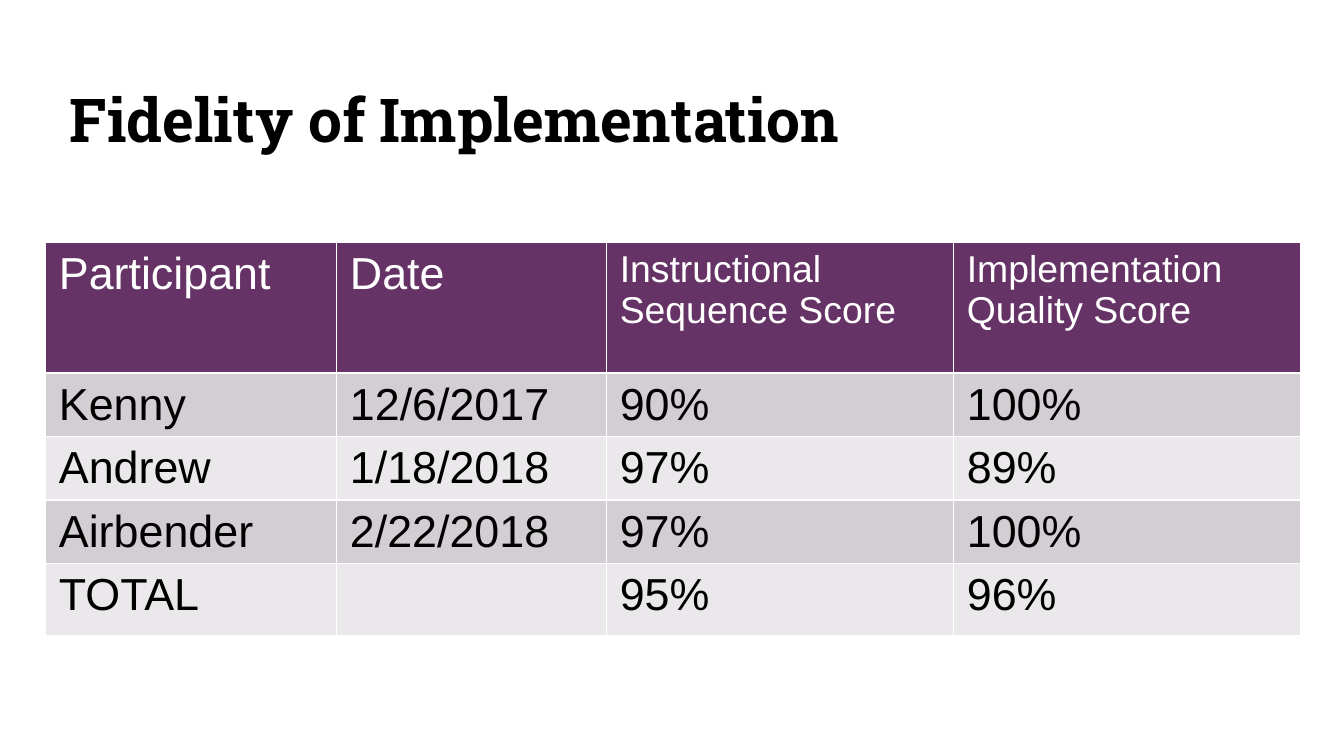
from pptx import Presentation
from pptx import util as u
from pptx.dml.color import RGBColor
from pptx.enum import text


def style(font, name, size, color, bold=False):
    font.name, font.size, font.bold = name, u.Pt(size), bold
    font.color.rgb = RGBColor.from_string(color)


deck = Presentation()
deck.slide_width, deck.slide_height = u.Cm(25.4), u.Cm(14.29)
slide = deck.slides.add_slide(deck.slide_layouts[5])

# Title
title = slide.shapes.title
title.left, title.top = u.Cm(1.07), u.Cm(1.27)
title.width, title.height = u.Cm(23.24), u.Cm(1.9)
frame = title.text_frame
frame.text = "Fidelity of Implementation"
frame.auto_size = text.MSO_AUTO_SIZE.NONE
frame.vertical_anchor = text.MSO_ANCHOR.BOTTOM
frame.margin_left = frame.margin_right = u.Cm(0.25)
frame.margin_top = frame.margin_bottom = u.Cm(0.25)
head = frame.paragraphs[0]
head.alignment = text.PP_ALIGN.LEFT
style(head.font, "Roboto Slab", 32.4, "000000", True)

# Scores; the default table style draws the white grid
rows = [
    ["Participant", "Date", "Instructional Sequence Score", "Implementation Quality Score"],
    ["Kenny", "12/6/2017", "90%", "100%"],
    ["Andrew", "1/18/2018", "97%", "89%"],
    ["Airbender", "2/22/2018", "97%", "100%"],
    ["TOTAL", "", "95%", "96%"],
]
widths = [5.5, 5.1, 6.56, 6.56]
heights = [2.48, 1.2, 1.2, 1.2, 1.37]
table = slide.shapes.add_table(
    len(rows), len(widths), u.Cm(0.86), u.Cm(4.57),
    u.Cm(sum(widths)), u.Cm(sum(heights))).table
for col, width in zip(table.columns, widths):
    col.width = u.Cm(width)
for row, height in zip(table.rows, heights):
    row.height = u.Cm(height)

for r, row in enumerate(rows):
    fill = "663366" if r == 0 else ("EAE8EA", "D3CED3")[r % 2]
    color = "FFFFFF" if r == 0 else "000000"
    for c, words in enumerate(row):
        cell = table.cell(r, c)
        cell.text = words
        cell.fill.solid()
        cell.fill.fore_color.rgb = RGBColor.from_string(fill)
        size = 20 if r == 0 and c > 1 else 24
        style(cell.text_frame.paragraphs[0].font, "Arial", size, color)

deck.save("out.pptx")
